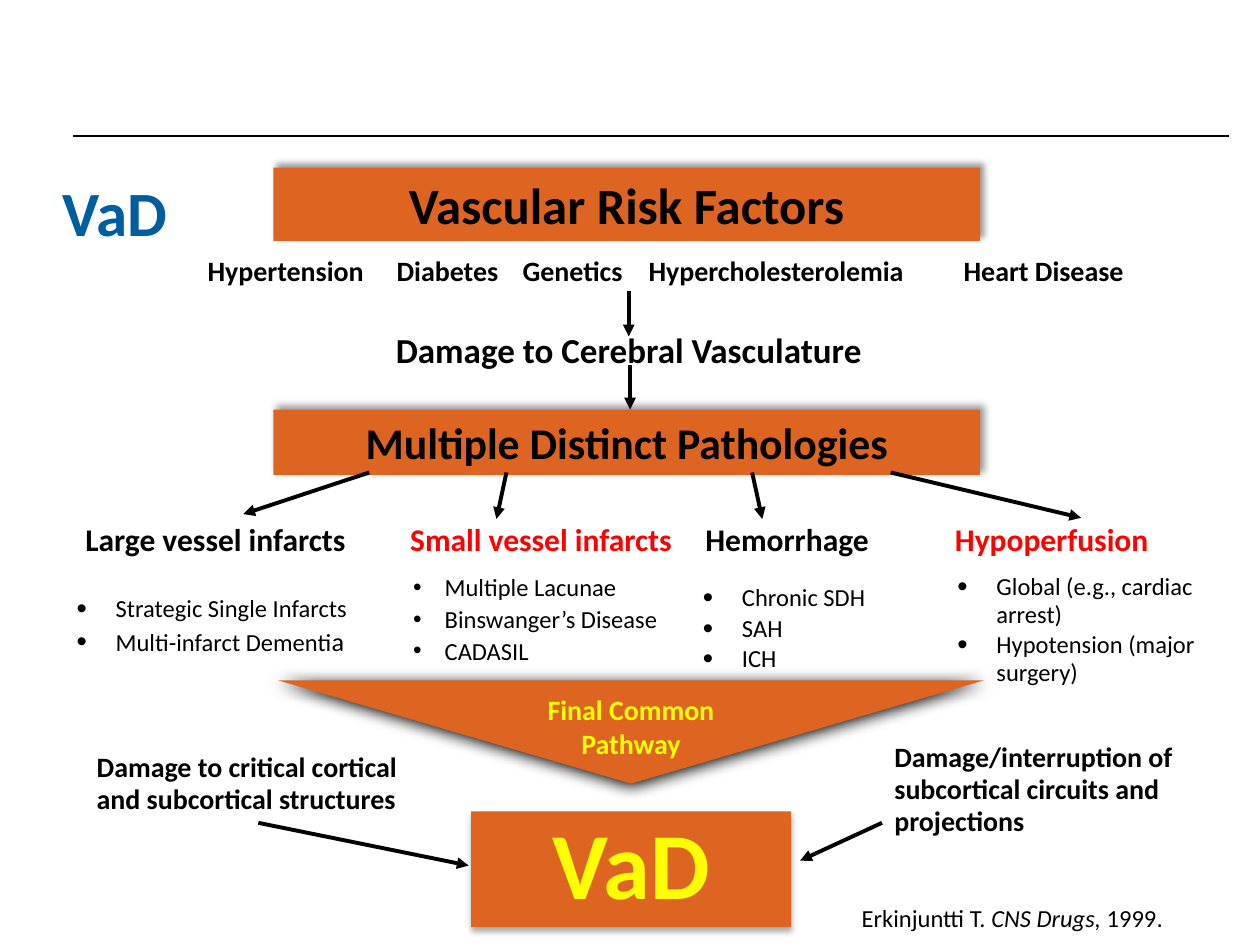
"""Build the slide on the path from vascular risk factors to VaD."""
from lxml import etree
from pptx import Presentation
from pptx import util as u
from pptx.dml.color import RGBColor
from pptx.enum import shapes, text
from pptx.oxml import ns

Pt = u.Pt
BLACK = RGBColor(0, 0, 0)
RED = RGBColor(0xFF, 0, 0)
BLUE = RGBColor(0, 0x5D, 0x9F)
YELLOW = RGBColor(0xFF, 0xFF, 0)
ORANGE = RGBColor(0xDE, 0x64, 0x22)
FONT = "Calibri"
LEFT, MID = text.PP_ALIGN.LEFT, text.PP_ALIGN.CENTER
RECT, WEDGE = shapes.MSO_SHAPE.RECTANGLE, shapes.MSO_SHAPE.FLOWCHART_MERGE

CAST = (40, 4, 3, 315)
BANDS = [
    (WEDGE, (159, 388.8, 403.2, 59), ["Final Common", "Pathway"], 16, YELLOW, 1, (100, 8.5, 1, 90)),
    (RECT, (156.2, 95.8, 404, 41.8), ["Vascular Risk Factors"], 29, BLACK, 1, CAST),
    (RECT, (156.2, 234, 404, 37.4), ["Multiple Distinct Pathologies"], 25, BLACK, 1, CAST),
    (RECT, (269.3, 463.7, 182.9, 66.2), ["VaD"], 54, YELLOW, 0.9, (32, 3.5, 2.2, 90)),
]
LABELS = [
    ((28.8, 95.8, 79.2, 39.6), "VaD", 36, BLUE, LEFT, 1),
    ((162, 185.8, 394.6, 53.3), "Damage to Cerebral Vasculature", 20, BLACK, MID, 0.95),
    ((38.2, 293.8, 169.9, 28.8), "Large vessel infarcts", 18, BLACK, MID, 1),
    ((223.9, 293.8, 170.6, 28.8), "Small vessel infarcts", 18, RED, MID, 1),
    ((396, 293.8, 113, 28.8), "Hemorrhage", 18, BLACK, LEFT, 1),
    ((538.6, 293.8, 135.4, 28.8), "Hypoperfusion", 18, RED, LEFT, 1),
    ((48.2, 426.2, 193, 43.9), "Damage to critical cortical and subcortical structures",
     16, BLACK, LEFT, 0.95),
    ((504, 420.5, 198, 61.9), "Damage/interruption of subcortical circuits and projections",
     16, BLACK, LEFT, 0.95),
]
RISKS = ["Hypertension", "Diabetes", "Genetics", "Hypercholesterolemia", "Heart Disease"]
STOPS = [82.8, 182.7, 251.3, 319.3, 475.7]
LISTS = [
    ((36.7, 335.5, 204.5, 44.6), 22.3, 120, 1,
     [[("Strategic Single Infarcts", 14)], [("Multi-infarct Dementi", 14), ("a", 15)]]),
    ((229, 323.3, 229, 61.2), 18, 100, 1,
     [[("Multiple Lacunae", 14)], [("Binswanger’s Disease", 14)], [("CADASIL", 14)]]),
    ((394.6, 330.5, 125.3, 59), 22.3, 120, 0.95,
     [[("Chronic SDH", 14)], [("SAH", 14)], [("ICH", 14)]]),
    ((540, 324, 154.8, 73.4), 22.3, 120, 0.95,
     [[("Global (e.g., cardiac arrest)", 14)], [("Hypotension (major surgery)", 14)]]),
]
CITE = [("Erkinjuntti T. ", False, FONT), ("CNS Drugs,", True, FONT),
        (" 1999", False, FONT), (".", False, "Arial")]
ARROWS = [
    (289.4, 270, 283.7, 296.6), (429.8, 270, 435.6, 296.6),
    (211, 270, 139, 293.8), (509, 270, 617.8, 295.9),
    (147.6, 470.2, 267.8, 494.6), (504, 470.2, 457.2, 491.8),
    (359.3, 166.3, 359.3, 192.2), (360, 208.8, 360, 234),
]
RULE = (41.8, 77.8, 702, 77.8)


def child(node, tag, **attrs):
    item = etree.SubElement(node, ns.qn(tag))
    for key, val in attrs.items():
        item.set(key, str(val))
    return item


def add_run(para, words, size, color=BLACK, bold=False, font=FONT):
    run = para.add_run()
    run.text = words
    run.font.name, run.font.size, run.font.bold = font, Pt(size), bold
    run.font.color.rgb = color
    return run


def add_box(slide, place, wrap=True):
    frame = slide.shapes.add_textbox(*map(Pt, place)).text_frame
    frame.word_wrap = wrap
    return frame


def add_para(frame, num, align=LEFT, lead=1):
    para = frame.add_paragraph() if num else frame.paragraphs[0]
    para.alignment, para.line_spacing = align, lead
    return para


def add_band(slide, kind, place, lines, size, color, lead, cast):
    band = slide.shapes.add_shape(kind, *map(Pt, place))
    band.fill.solid()
    band.fill.fore_color.rgb = ORANGE
    band.line.fill.background()
    band.shadow.inherit = False
    alpha, blur, dist, angle = cast
    glow = child(band._element.spPr.find(ns.qn("a:effectLst")), "a:outerShdw",
                 blurRad=int(Pt(blur)), dist=int(Pt(dist)), dir=angle * 60000,
                 algn="ctr", rotWithShape=0)
    child(child(glow, "a:srgbClr", val="000000"), "a:alpha", val=alpha * 1000)
    frame = band.text_frame
    frame.vertical_anchor = text.MSO_ANCHOR.TOP
    frame.word_wrap = kind == RECT
    if kind == WEDGE:
        frame.margin_top, frame.margin_bottom = Pt(7.2), 0
    for num, words in enumerate(lines):
        add_run(add_para(frame, num, MID, lead), words, size, color, True)


def add_list(slide, place, indent, scale, lead, items):
    frame = add_box(slide, place)
    for num, item in enumerate(items):
        para = add_para(frame, num, LEFT, lead)
        if num:
            para.space_before = Pt(1.4)
        props = para._p.get_or_add_pPr()
        props.set("marL", str(int(Pt(indent))))
        props.set("indent", str(-int(Pt(indent))))
        child(props, "a:buSzPct", val=scale * 1000)
        child(props, "a:buFont", typeface="Arial")
        child(props, "a:buChar", char="•")
        for words, size in item:
            add_run(para, words, size)


def add_risks(slide):
    para = add_para(add_box(slide, (28.8, 141.1, 664.6, 26.6)), 0)
    props = para._p.get_or_add_pPr()
    props.set("marL", str(int(Pt(STOPS[0]))))
    props.set("indent", "0")
    tabs = child(props, "a:tabLst")
    for stop in STOPS[1:]:
        child(tabs, "a:tab", pos=int(Pt(stop)), algn="l")
    add_run(para, "\t".join(RISKS), 16, bold=True)


def add_line(slide, ends, width, arrow):
    line = slide.shapes.add_connector(shapes.MSO_CONNECTOR.STRAIGHT, *map(Pt, ends))
    line.line.color.rgb, line.line.width = BLACK, Pt(width)
    if arrow:
        child(line.line._get_or_add_ln(), "a:tailEnd", type="triangle")
    child(line._element.spPr, "a:effectLst")


def main():
    deck = Presentation()
    deck.slide_width, deck.slide_height = Pt(720), Pt(540)
    slide = deck.slides.add_slide(deck.slide_layouts[6])
    for band in BANDS:
        add_band(slide, *band)
    for place, words, size, color, align, lead in LABELS:
        para = add_para(add_box(slide, place), 0, align, lead)
        add_run(para, words, size, color, True)
    add_risks(slide)
    for group in LISTS:
        add_list(slide, *group)
    para = add_para(add_box(slide, (485.3, 512.6, 188.6, 23.8), False), 0)
    for words, slant, font in CITE:
        add_run(para, words, 14, font=font).font.italic = slant
    for ends in ARROWS:
        add_line(slide, ends, 2.25, True)
    add_line(slide, RULE, 1.5, False)
    deck.save("out.pptx")


if __name__ == "__main__":
    main()
